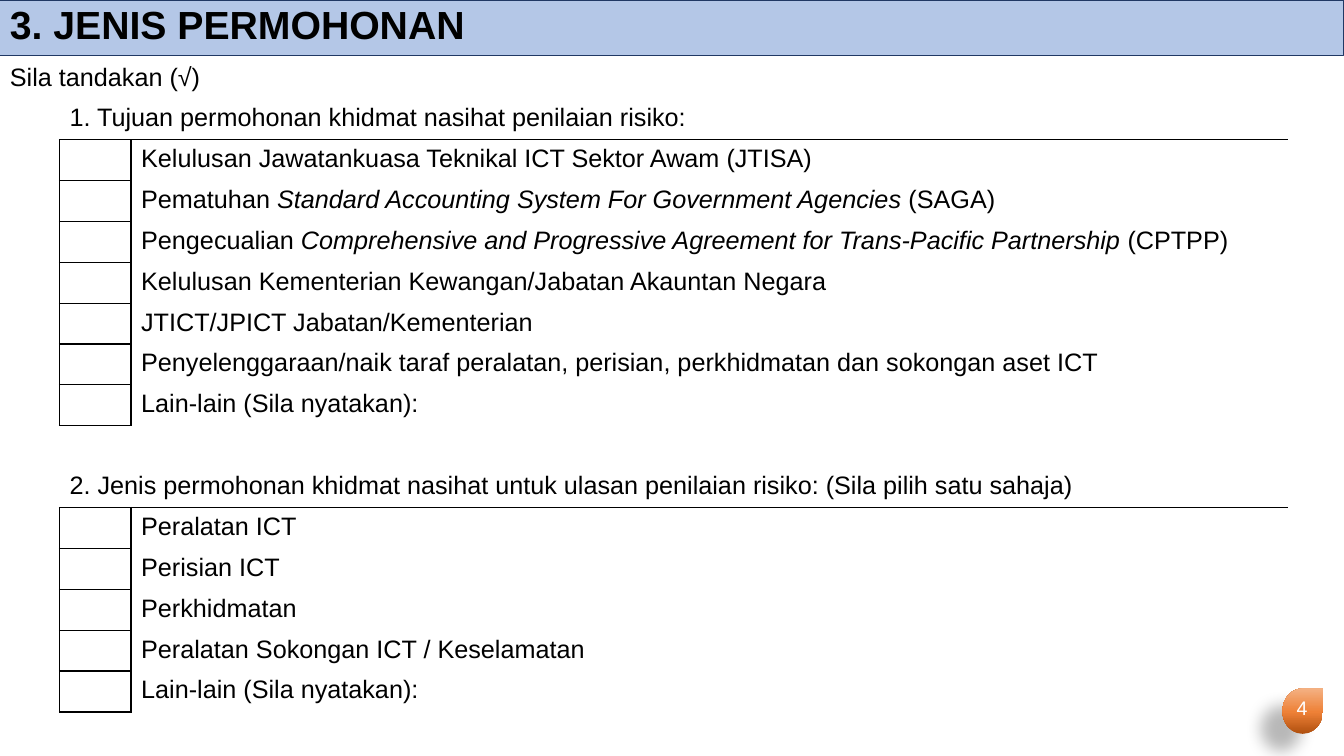
from lxml import etree
from pptx import Presentation
from pptx.dml.color import RGBColor
from pptx.enum.shapes import MSO_SHAPE
from pptx.enum.text import MSO_ANCHOR, PP_ALIGN
from pptx.oxml.ns import qn
from pptx.util import Inches, Pt

RECTANGLE, TEARDROP = MSO_SHAPE.RECTANGLE, MSO_SHAPE.TEAR
MIDDLE = MSO_ANCHOR.MIDDLE
LEFT, CENTER = PP_ALIGN.LEFT, PP_ALIGN.CENTER

BODY = {"name": "Arial", "size": Pt(18), "bold": False}
TITLE = {"name": "Arial", "size": Pt(28), "bold": True}
NUMBER = {"name": "Arial", "size": Pt(14), "bold": False}
BLACK, WHITE = "000000", "FFFFFF"
NO_TABLE_STYLE = "{2D5ABB26-0587-4C30-8999-92F81FD0307C}"
BADGE_STOPS = [(0, "B0500F"), (48, "EE8137"), (100, "F4B183")]

# Each section: heading and its options; an option is a list of (text, italic)
SECTIONS = [
    ("1. Tujuan permohonan khidmat nasihat penilaian risiko:", [
        [("Kelulusan Jawatankuasa Teknikal ICT Sektor Awam (JTISA)", False)],
        [("Pematuhan ", False),
         ("Standard Accounting System For Government Agencies ", True),
         ("(SAGA)", False)],
        [("Pengecualian ", False),
         ("Comprehensive and Progressive Agreement for Trans-Pacific Partnership ", True),
         ("(CPTPP)", False)],
        [("Kelulusan Kementerian Kewangan/Jabatan Akauntan Negara", False)],
        [("JTICT/JPICT Jabatan/Kementerian", False)],
        [("Penyelenggaraan/naik taraf peralatan, perisian, perkhidmatan dan sokongan aset ICT",
          False)],
        [("Lain-lain (Sila nyatakan):", False)],
    ]),
    ("2. Jenis permohonan khidmat nasihat untuk ulasan penilaian risiko: (Sila pilih satu sahaja)", [
        [("Peralatan ICT", False)],
        [("Perisian ICT", False)],
        [("Perkhidmatan", False)],
        [("Peralatan Sokongan ICT / Keselamatan", False)],
        [("Lain-lain (Sila nyatakan):", False)],
    ]),
]


def colour(value):
    return RGBColor.from_string(value)


def write(para, parts, formats, ink=BLACK, align=LEFT):
    para.alignment = align
    for text, italic in parts:
        span = para.add_run()
        span.text = text
        for name, value in formats.items():
            setattr(span.font, name, value)
        span.font.italic = italic
        span.font.color.rgb = colour(ink)


def add_label(page, place, text, formats, ink=BLACK, align=LEFT):
    box = page.shapes.add_textbox(*map(Inches, place))
    box.text_frame.word_wrap = True
    write(box.text_frame.paragraphs[0], [(text, False)], formats, ink, align)


def add_title_bar(page, text):
    bar = page.shapes.add_shape(RECTANGLE, *map(Inches, (0, 0, 13.33, 0.55)))
    bar.shadow.inherit = False
    bar.fill.solid()
    bar.fill.fore_color.rgb = colour("B4C7E7")
    bar.line.color.rgb = colour("203864")
    bar.line.width = Pt(0.75)
    bar.text_frame.word_wrap = True
    bar.text_frame.vertical_anchor = MIDDLE
    para = bar.text_frame.paragraphs[0]
    para.line_spacing = 0.85
    write(para, [(text, False)], TITLE)


def add_element(parent, tag, **attributes):
    element = etree.SubElement(parent, qn(tag))
    for name, value in attributes.items():
        element.set(name, str(value))
    return element


def add_badge(page):
    badge = page.shapes.add_shape(TEARDROP, *map(Inches, (12.72, 6.83, 0.4, 0.45)))
    badge.line.fill.background()
    # Three-stop gradient, running upwards
    badge.fill.gradient()
    badge.fill.gradient_angle = 90
    stops = badge._element.spPr.find(qn("a:gradFill")).find(qn("a:gsLst"))
    for old in list(stops):
        stops.remove(old)
    for percent, value in BADGE_STOPS:
        stop = add_element(stops, "a:gs", pos=percent * 1000)
        add_element(stop, "a:srgbClr", val=value)
    # Soft shadow to the lower left
    badge.shadow.inherit = False
    effects = badge._element.spPr.find(qn("a:effectLst"))
    shadow = add_element(effects, "a:outerShdw", blurRad=Pt(11.8), dist=Pt(19.7),
                         dir=141 * 60000, algn="ctr", rotWithShape=0)
    tint = add_element(shadow, "a:srgbClr", val=BLACK)
    add_element(tint, "a:alpha", val=28000)


def outline_cell(cell):
    properties = cell._tc.get_or_add_tcPr()
    for side in ("a:lnL", "a:lnR", "a:lnT", "a:lnB"):
        line = add_element(properties, side, w=Pt(1))
        add_element(add_element(line, "a:solidFill"), "a:srgbClr", val=BLACK)


def add_checklist(page, sections):
    # Every section has a heading row, its options and an empty closing row
    count = sum(len(options) + 2 for _, options in sections)
    height = Inches(6.49)
    frame = page.shapes.add_table(count, 2, Inches(0.59), Inches(0.98),
                                  Inches(12.18), height)
    table = frame.table
    table.first_row = table.horz_banding = False
    table._tbl.tblPr.find(qn("a:tableStyleId")).text = NO_TABLE_STYLE
    for column, width in zip(table.columns, (0.71, 11.47)):
        column.width = Inches(width)
    for row in table.rows:
        row.height = height // count

    index = 0
    for heading, options in sections:
        title = table.cell(index, 0)
        title.merge(table.cell(index, 1))
        write(title.text_frame.paragraphs[0], [(heading, False)], BODY)
        for offset, parts in enumerate(options, 1):
            outline_cell(table.cell(index + offset, 0))
            label = table.cell(index + offset, 1)
            write(label.text_frame.paragraphs[0], parts, BODY)
        index += len(options) + 2

    for cell in table.iter_cells():
        cell.fill.background()


def main():
    deck = Presentation()
    deck.slide_width, deck.slide_height = Inches(13.33), Inches(7.5)
    page = deck.slides.add_slide(deck.slide_layouts[6])

    # Page number
    add_badge(page)
    add_label(page, (12.67, 6.86, 0.49, 0.4), "4", NUMBER, WHITE, CENTER)

    # Title and instruction
    add_label(page, (0, 0.56, 13.33, 0.4), "Sila tandakan (√)", BODY)
    add_title_bar(page, "3. JENIS PERMOHONAN")

    # Tick boxes
    add_checklist(page, SECTIONS)
    deck.save("out.pptx")


if __name__ == "__main__":
    main()
